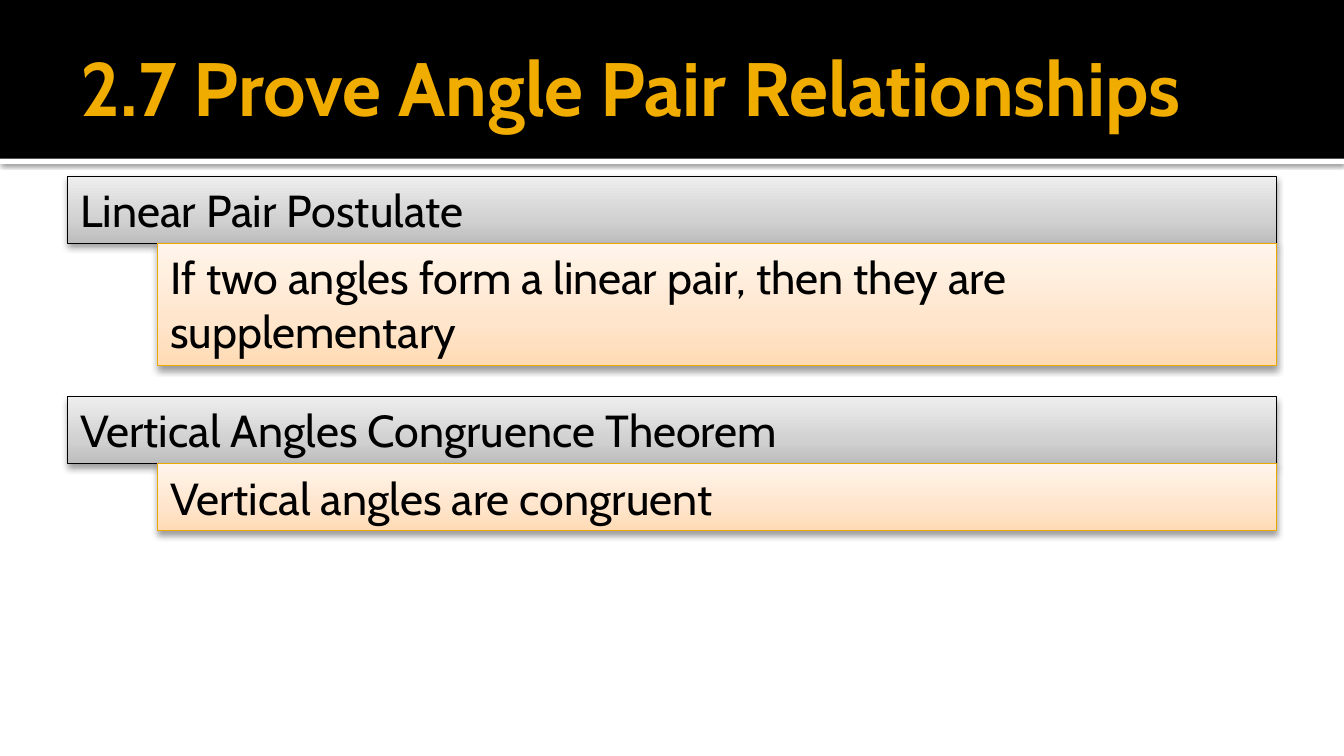
from copy import deepcopy
from dataclasses import dataclass

from lxml import etree
from pptx import Presentation
from pptx.dml.color import RGBColor
from pptx.enum.shapes import MSO_SHAPE
from pptx.enum.text import MSO_ANCHOR, MSO_AUTO_SIZE, PP_ALIGN
from pptx.oxml.ns import qn
from pptx.util import Inches, Pt

RECTANGLE = MSO_SHAPE.RECTANGLE
LEFT = PP_ALIGN.LEFT
TOP, MIDDLE = MSO_ANCHOR.TOP, MSO_ANCHOR.MIDDLE
GROW, FIXED = MSO_AUTO_SIZE.SHAPE_TO_FIT_TEXT, MSO_AUTO_SIZE.NONE
TITLE_ONLY = 5
PAGE_WIDTH = 10
PAGE_HEIGHT = PAGE_WIDTH * 9 / 16


@dataclass(frozen=True)
class Theme:
    font: str = "Cabin"
    title_size: float = 40.5
    text_size: float = 24
    title: str = "F0AD00"
    text: str = "000000"
    band: str = "000000"
    rule: str = "FFFFFF"
    shadow: str = "000000"
    stops: tuple = (0, 0.35, 1)
    name_fill: tuple = ("BDBDBD", "D1D1D1", "EEEEEE")
    name_line: str = "000000"
    statement_fill: tuple = ("FFDBB5", "FFE5CB", "FFF5EB")
    statement_line: str = "EBA900"


def write_text(frame, text, *, size, color, font, bold=False, anchor=TOP, fit=FIXED):
    """Fill a text frame with one left-aligned, formatted paragraph."""
    frame.word_wrap = True
    frame.auto_size = fit
    frame.vertical_anchor = anchor
    para = frame.paragraphs[0]
    para.alignment = LEFT
    span = para.add_run()
    span.text = text
    span.font.name = font
    span.font.size = Pt(size)
    span.font.bold = bold
    span.font.color.rgb = RGBColor.from_string(color)


class SlideBuilder:
    def __init__(self, page, theme):
        self.page = page
        self.theme = theme

    def rectangle(self, left, top, width, height):
        box = self.page.shapes.add_shape(
            RECTANGLE, Inches(left), Inches(top), Inches(width), Inches(height))
        box.shadow.inherit = False
        return box

    def cast_shadow(self, box, opacity, blur, distance):
        """Add a shadow that falls straight down."""
        effects = box.element.spPr.find(qn("a:effectLst"))
        shadow = etree.SubElement(
            effects, qn("a:outerShdw"), blurRad=str(Pt(blur)), dist=str(Pt(distance)),
            dir="5400000", algn="ctr", rotWithShape="0")
        color = etree.SubElement(shadow, qn("a:srgbClr"), val=self.theme.shadow)
        etree.SubElement(color, qn("a:alpha"), val=str(opacity * 1000))

    def band(self, top, height, color):
        box = self.rectangle(0, top, PAGE_WIDTH, height)
        box.fill.solid()
        box.fill.fore_color.rgb = RGBColor.from_string(color)
        box.line.fill.background()
        return box

    def title(self, text):
        title = self.page.shapes.title
        title.left, title.top = Inches(0.5), Inches(0.13)
        title.width, title.height = Inches(9), Inches(1.03)
        frame = title.text_frame
        frame.margin_left = Inches(0.1)
        frame.margin_right = frame.margin_top = frame.margin_bottom = Inches(0.05)
        write_text(frame, text, size=self.theme.title_size, color=self.theme.title,
                   font=self.theme.font, bold=True, anchor=MIDDLE)
        # Bring the title in front of the header band
        title.element.getparent().append(title.element)

    def gradient(self, box, colors):
        """Fill from bottom to top with three colours."""
        box.fill.gradient()
        box.fill.gradient_angle = 90
        stop_list = box.element.spPr.find(".//" + qn("a:gsLst"))
        stop_list.append(deepcopy(stop_list[0]))
        for stop, position, color in zip(box.fill.gradient_stops, self.theme.stops, colors):
            stop.position = position
            stop.color.rgb = RGBColor.from_string(color)

    def text_box(self, left, top, height, text, colors, line):
        """Draw a shaded box that reaches the right margin."""
        box = self.rectangle(left, top, 9.5 - left, height)
        self.gradient(box, colors)
        box.line.color.rgb = RGBColor.from_string(line)
        box.line.width = Pt(0.5)
        self.cast_shadow(box, 38, 3.5, 2)
        write_text(box.text_frame, text, size=self.theme.text_size,
                   color=self.theme.text, font=self.theme.font, fit=GROW)

    def rule_pair(self, top, name, statement, statement_height):
        """Draw a rule's name with its indented statement below."""
        name_height = 0.5
        self.text_box(0.5, top, name_height, name,
                      self.theme.name_fill, self.theme.name_line)
        self.text_box(1.17, top + name_height, statement_height, statement,
                      self.theme.statement_fill, self.theme.statement_line)


def main():
    deck = Presentation()
    deck.slide_width, deck.slide_height = Inches(PAGE_WIDTH), Inches(PAGE_HEIGHT)
    theme = Theme()
    builder = SlideBuilder(deck.slides.add_slide(deck.slide_layouts[TITLE_ONLY]), theme)

    # Header
    header_height = 1.18
    white_rule = builder.band(header_height, 0.04, theme.rule)
    builder.cast_shadow(white_rule, 60, 2.5, 0.8)
    builder.band(0, header_height, theme.band)
    builder.title("2.7 Prove Angle Pair Relationships")

    # Postulate and theorem
    builder.rule_pair(1.31, "Linear Pair Postulate",
                      "If two angles form a linear pair, then they are supplementary", 0.91)
    builder.rule_pair(2.95, "Vertical Angles Congruence Theorem",
                      "Vertical angles are congruent", 0.5)

    deck.save("out.pptx")


if __name__ == "__main__":
    main()
